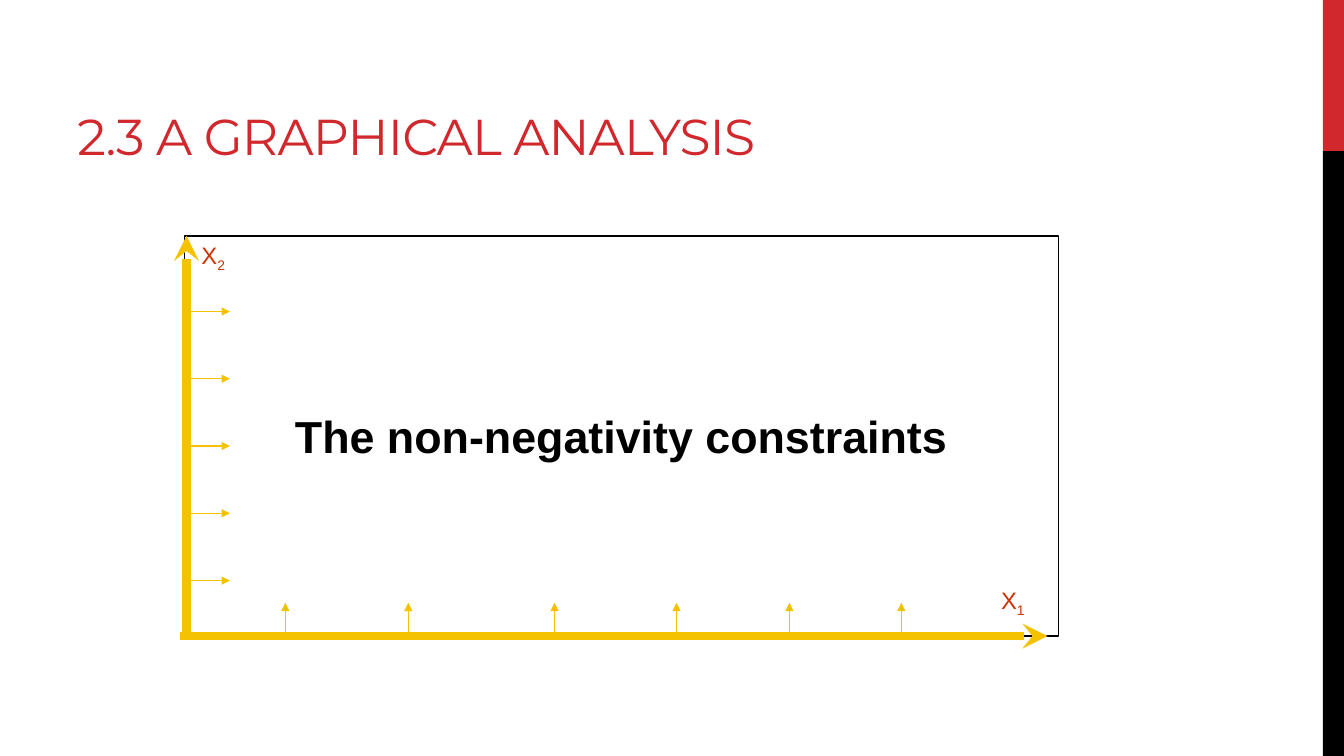
from pptx import Presentation
from pptx.dml.color import RGBColor
from pptx.enum import shapes, text
from pptx.oxml.ns import qn
from pptx.util import Inches, Pt
from lxml import etree

RED, BLACK, GOLD, RUST = "D1282E", "000000", "F5C201", "CC3300"


def color(value):
    return RGBColor.from_string(value)


def arrow(x1, y1, x2, y2, width, head):
    ln = s.shapes.add_connector(
        shapes.MSO_CONNECTOR.STRAIGHT, Inches(x1), Inches(y1), Inches(x2), Inches(y2))
    ln.line.color.rgb = color(GOLD)
    ln.line.width = Pt(width)
    etree.SubElement(ln.line._get_or_add_ln(), qn("a:tailEnd"), type=head)
    etree.SubElement(ln._element.spPr, qn("a:effectLst"))


prs = Presentation()
prs.slide_width, prs.slide_height = Inches(13.33), Inches(7.5)
s = prs.slides.add_slide(prs.slide_layouts[6])

for top, height, fill in [(0, 1.5, RED), (1.5, 6, BLACK)]:
    sp = s.shapes.add_shape(
        shapes.MSO_SHAPE.RECTANGLE, Inches(13.12), Inches(top), Inches(0.21), Inches(height))
    sp.shadow.inherit = False
    sp.fill.solid()
    sp.fill.fore_color.rgb = color(fill)
    sp.line.fill.background()

title = s.shapes.add_textbox(Inches(0.67), Inches(0.17), Inches(8.44), Inches(1.5))
tf = title.text_frame
tf.word_wrap = True
tf.vertical_anchor = text.MSO_ANCHOR.BOTTOM
tf.margin_bottom = Inches(0.03)
tf.text = "2.3 A GRAPHICAL ANALYSIS"
r = tf.paragraphs[0].runs[0]
r.font.name, r.font.size = "Montserrat", Pt(36)
r.font.color.rgb = color(RED)
r._r.get_or_add_rPr().set("spc", "-60")

plot = s.shapes.add_shape(
    shapes.MSO_SHAPE.RECTANGLE, Inches(1.83), Inches(2.34), Inches(8.67), Inches(3.97))
plot.shadow.inherit = False
plot.fill.solid()
plot.fill.fore_color.rgb = color("FFFFFF")
plot.line.color.rgb = color(BLACK)
plot.line.width = Pt(1)
tf = plot.text_frame
tf.word_wrap = False
tf.vertical_anchor = text.MSO_ANCHOR.MIDDLE
tf.text = "The non-negativity constraints"
p = tf.paragraphs[0]
p.alignment = text.PP_ALIGN.CENTER
r = p.runs[0]
r.font.name, r.font.size, r.font.bold = "Arial", Pt(32), True
r.font.color.rgb = color(BLACK)

for left, top, index in [(1.9, 2.34, "2"), (9.83, 5.76, "1")]:
    label = s.shapes.add_textbox(Inches(left), Inches(top), Inches(0.45), Inches(0.39))
    tf = label.text_frame
    tf.word_wrap = False
    tf.auto_size = text.MSO_AUTO_SIZE.SHAPE_TO_FIT_TEXT
    p = tf.paragraphs[0]
    for part in ["X", index]:
        r = p.add_run()
        r.text = part
        r.font.name, r.font.size = "Arial", Pt(17)
        r.font.color.rgb = color(RUST)
    r._r.get_or_add_rPr().set("baseline", "-25000")

arrow(1.79, 6.31, 10.39, 6.31, 6, "stealth")
arrow(1.85, 6.29, 1.85, 2.34, 6, "stealth")
for i in range(5):
    y = 3.09 + i * 2.67 / 4
    arrow(1.83, y, 2.28, y, 1, "triangle")
for x in [2.83, 4.05, 5.5, 6.71, 7.83, 8.94]:
    arrow(x, 6.31, x, 5.98, 1, "triangle")

prs.save("out.pptx")
